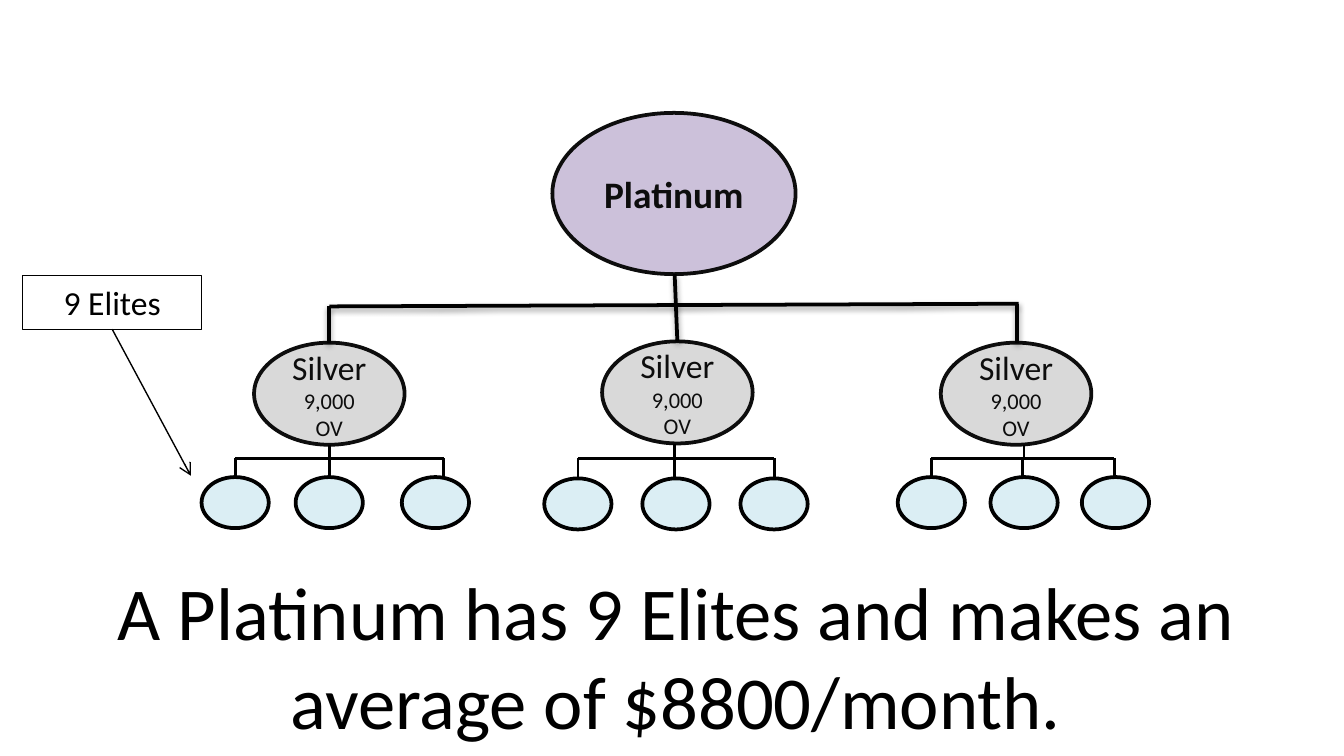
"""Builds the Platinum organisation slide with its Silver and Elite levels."""
from lxml.etree import SubElement
from pptx import Presentation
from pptx.dml.color import RGBColor
from pptx.enum.shapes import MSO_CONNECTOR, MSO_SHAPE
from pptx.enum.text import MSO_ANCHOR, MSO_AUTO_SIZE, PP_ALIGN
from pptx.oxml.ns import qn
from pptx.util import Inches, Pt

COLORS = {
    "platinum": "CCC1DA",
    "silver": "D9D9D9",
    "elite": "DBEEF4",
    "ink": "0D0D0D",
    "black": "000000",
}
FONT = "Calibri"

PLATINUM = [("Platinum", 20, True)]
SILVER = [("Silver", 18, False), ("9,000 OV", 12, False)]
ELITES = [("9 Elites", 18, False)]
CAPTION = [("A Platinum has 9 Elites and makes an average of $8800/month.", 40, False)]

BRANCHES = [
    {"silver": (1.89, 2.55), "stem": 2.45, "elite_top": 3.55,
     "elites": (1.5, 2.2, 2.99), "drops": (1.75, 2.45, 3.3)},
    {"silver": (4.48, 2.54), "stem": 5.02, "elite_top": 3.56,
     "elites": (4.05, 4.78, 5.51), "drops": (4.3, 5.02, 5.76)},
    {"silver": (7, 2.55), "stem": 7.62, "elite_top": 3.55,
     "elites": (6.68, 7.37, 8.05), "drops": (6.93, 7.61, 8.29)},
]
TRUNK = [
    ((7.58, 2.26), (2.45, 2.28)),
    ((7.57, 2.26), (7.57, 2.55)),
    ((2.45, 2.28), (2.45, 2.55)),
    ((5.02, 2.04), (5.04, 2.54)),
]
SILVER_SIZE = (1.12, 0.76)
ELITE_SIZE = (0.5, 0.38)
BUS_TOP = 3.41


def color(key):
    return RGBColor.from_string(COLORS[key])


def write(frame, paragraphs, ink):
    frame.word_wrap = True
    for index, (text, size, bold) in enumerate(paragraphs):
        paragraph = frame.add_paragraph() if index else frame.paragraphs[0]
        paragraph.alignment = PP_ALIGN.CENTER
        run = paragraph.add_run()
        run.text = text
        run.font.name = FONT
        run.font.size = Pt(size)
        run.font.bold = bold
        run.font.color.rgb = color(ink)


def add_node(slide, preset, place, size, fill, outline, paragraphs=()):
    node = slide.shapes.add_shape(preset, *map(Inches, place + size))
    node.shadow.inherit = False
    node.fill.solid()
    node.fill.fore_color.rgb = color(fill)
    node.line.color.rgb = color(outline)
    node.line.width = Pt(2)
    node.text_frame.vertical_anchor = MSO_ANCHOR.MIDDLE
    write(node.text_frame, paragraphs, "ink")


def add_line(slide, start, end, width, shadow=False):
    line = slide.shapes.add_connector(MSO_CONNECTOR.STRAIGHT, *map(Inches, start + end))
    line.line.color.rgb = color("black")
    line.line.width = Pt(width)
    effects = SubElement(line._element.spPr, qn("a:effectLst"))
    if shadow:
        outer = SubElement(effects, qn("a:outerShdw"), blurRad=str(Pt(3.1)),
                           dist=str(Pt(1.6)), dir="5400000", rotWithShape="0")
        tint = SubElement(outer, qn("a:srgbClr"), val=COLORS["black"])
        SubElement(tint, qn("a:alpha"), val="38000")
    return line


def add_text(slide, place, size, paragraphs):
    box = slide.shapes.add_textbox(*map(Inches, place + size))
    write(box.text_frame, paragraphs, "black")
    box.text_frame.auto_size = MSO_AUTO_SIZE.SHAPE_TO_FIT_TEXT
    return box


def main():
    deck = Presentation()
    deck.slide_width = Inches(10)
    deck.slide_height = deck.slide_width * 9 // 16
    slide = deck.slides.add_slide(deck.slide_layouts[6])

    add_node(slide, MSO_SHAPE.OVAL, (4.11, 0.84), (1.81, 1.2), "platinum", "ink", PLATINUM)
    for branch in BRANCHES:
        add_node(slide, MSO_SHAPE.OVAL, branch["silver"], SILVER_SIZE, "silver", "ink", SILVER)
    for start, end in TRUNK:
        add_line(slide, start, end, 2, shadow=True)
    add_text(slide, (0.48, 4.16), (9.1, 1.45), CAPTION)

    for branch in BRANCHES:
        drops, elite_top = branch["drops"], branch["elite_top"]
        for left in branch["elites"]:
            add_node(slide, MSO_SHAPE.FLOWCHART_CONNECTOR, (left, elite_top), ELITE_SIZE,
                     "elite", "black")
        add_line(slide, (drops[0], BUS_TOP), (drops[-1], BUS_TOP), 1.5)
        for drop in drops:
            add_line(slide, (drop, BUS_TOP), (drop, elite_top), 1.5)
        silver_bottom = branch["silver"][1] + SILVER_SIZE[1]
        add_line(slide, (branch["stem"], silver_bottom), (branch["stem"], BUS_TOP), 1.5)

    elites_label = add_text(slide, (0.17, 2.05), (1.33, 0.4), ELITES)
    elites_label.line.color.rgb = color("black")
    elites_label.line.width = Pt(0.5)
    pointer = add_line(slide, (0.83, 2.45), (1.42, 3.54), 0.75)
    pointer.begin_connect(elites_label, 2)
    SubElement(pointer.line._get_or_add_ln(), qn("a:tailEnd"), type="arrow")

    deck.save("out.pptx")


if __name__ == "__main__":
    main()
